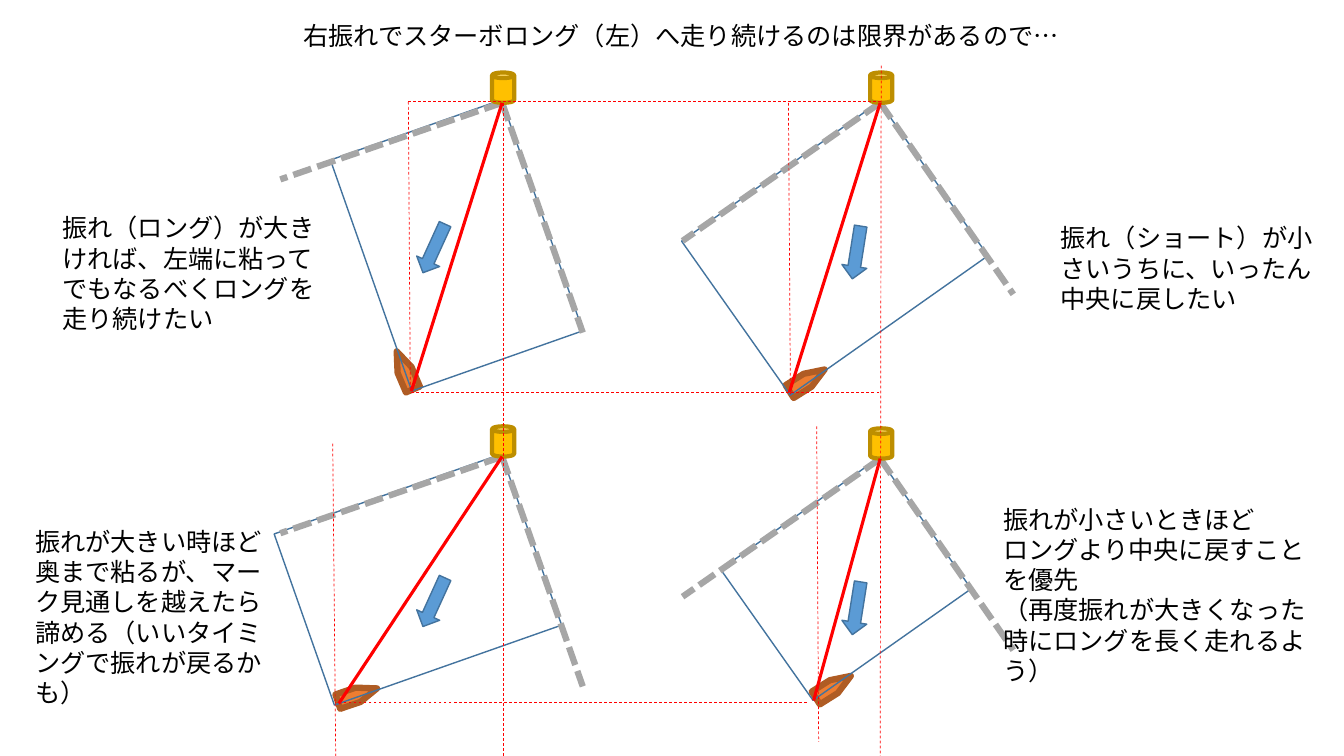
from dataclasses import dataclass

from lxml.etree import SubElement
from pptx import Presentation
from pptx.dml.color import RGBColor
from pptx.enum.dml import MSO_LINE
from pptx.enum.lang import MSO_LANGUAGE_ID
from pptx.enum.shapes import MSO_CONNECTOR, MSO_SHAPE
from pptx.enum.text import MSO_AUTO_SIZE
from pptx.oxml.ns import qn
from pptx.util import Inches, Pt


def rgb(value):
    return RGBColor.from_string(value)


@dataclass
class CourseSlide:
    """Draws sailing courses and captions on one slide in a shared style."""

    slide: object
    font: str = "Noto Sans CJK JP"
    size: int = 18
    ink: str = "000000"
    blue: str = "43739E"
    red: str = "FF0000"
    grey: str = "A6A6A6"

    def outline(self, part, color, width, dash=None):
        part.line.color.rgb = rgb(color)
        part.line.width = Pt(width)
        if dash:
            part.line.dash_style = dash

    def shape(self, kind, box, fill, color, width, angle=0):
        part = self.slide.shapes.add_shape(kind, *map(Inches, box))
        part.shadow.inherit = False
        part.rotation = angle
        if fill:
            part.fill.solid()
            part.fill.fore_color.rgb = rgb(fill)
        else:
            part.fill.background()
        self.outline(part, color, width)
        return part

    def line(self, start, end, color, width, dash=None):
        part = self.slide.shapes.add_connector(
            MSO_CONNECTOR.STRAIGHT, *map(Inches, (*start, *end)))
        SubElement(part._element.spPr, qn("a:effectLst"))
        self.outline(part, color, width, dash)

    def guide(self, start, end):
        self.line(start, end, self.red, 0.5, MSO_LINE.DASH)

    def boat(self, left, top, angle):
        hull = self.shape(MSO_SHAPE.PENTAGON, (left, top, 0.41, 0.15),
                          "ED7D31", "AF5C24", 4.5, angle)
        hull.adjustments[0] = 1.321

    def course(self, mark, swing, boat, field, goal):
        x, y = mark
        self.boat(*boat)
        self.shape(MSO_SHAPE.RECTANGLE, field, None, self.blue, 1, swing["tilt"])
        for dx, dy in swing["laylines"]:
            self.line(mark, (x + dx, y + dy), self.grey, 4.5, MSO_LINE.SQUARE_DOT)
        self.shape(MSO_SHAPE.CAN, (x - 0.1, y - 0.3, 0.22, 0.3), "FFC000", "BD8E00", 3)
        self.line(mark, goal, self.red, 2.25)
        dx, dy = swing["wind"]
        self.shape(MSO_SHAPE.DOWN_ARROW, (x + dx, y + dy, 0.25, 0.53),
                   "5B9BD5", self.blue, 1, swing["wind_angle"])

    def caption(self, box, *paragraphs):
        frame = self.slide.shapes.add_textbox(*map(Inches, box)).text_frame
        frame.word_wrap = True
        frame.auto_size = MSO_AUTO_SIZE.SHAPE_TO_FIT_TEXT
        for index, words in enumerate(paragraphs):
            paragraph = frame.add_paragraph() if index else frame.paragraphs[0]
            paragraph.text = words
            paragraph.font.name = self.font
            paragraph.font.size = Pt(self.size)
            paragraph.font.color.rgb = rgb(self.ink)
            for run in paragraph.runs:
                run.font.language_id = MSO_LANGUAGE_ID.JAPANESE
                SubElement(run._r.get_or_add_rPr(), qn("a:ea"), typeface=self.font)


LARGE_SWING = {"tilt": 340.6, "laylines": ((-2.2, 0.76), (0.8, 2.28)),
               "wind": (-0.8, 1.18), "wind_angle": 24.5}
SMALL_SWING = {"tilt": 324.8, "laylines": ((-1.96, 1.37), (1.32, 1.9)),
               "wind": (-0.36, 1.22), "wind_angle": 9}

COURSES = (
    ((8.73, 1.02), SMALL_SWING, (7.8, 3.7, 327.8), (7.08, 1.53, 2.4, 1.87), (7.83, 3.89)),
    ((4.98, 1.02), LARGE_SWING, (3.81, 3.6, 247), (3.63, 1.22, 1.8, 2.43), (4.08, 3.88)),
    ((4.98, 4.53), LARGE_SWING, (3.34, 6.82, 341.4), (2.95, 4.85, 2.39, 1.8), (3.36, 6.98)),
    ((8.73, 4.55), SMALL_SWING, (8.06, 6.74, 327.8), (7.43, 4.95, 1.92, 1.59), (8.07, 6.95)),
)

GUIDES = (
    ((4.05, 1.01), (8.74, 1.01)),
    ((4.08, 3.89), (8.74, 3.89)),
    ((8, 6.97), (3.32, 6.97)),
    ((4.99, 1.02), (4.99, 7.9)),
    ((8.74, 0.65), (8.73, 7.53)),
    ((3.3, 4.4), (3.33, 7.52)),
    ((8.1, 4.23), (8.12, 7.36)),
    ((4.05, 1.01), (4.07, 3.88)),
    ((7.82, 1.02), (7.84, 3.91)),
)

CAPTIONS = (
    ((2.91, 0.15, 8.68, 0.4),
     "右振れでスターボロング（左）へ走り続けるのは限界があるので…"),
    ((0.52, 2.06, 2.86, 1.31),
     "振れ（ロング）が大きければ、左端に粘ってでもなるべくロングを走り続けたい"),
    ((10.42, 2.16, 2.86, 1.01),
     "振れ（ショート）が小さいうちに、いったん中央に戻したい"),
    ((0.25, 5.17, 2.51, 1.92),
     "振れが大きい時ほど",
     "奥まで粘るが、マーク見通しを越えたら諦める（いいタイミングで振れが戻るかも）"),
    ((9.85, 4.95, 3.27, 1.92),
     "振れが小さいときほど\nロングより中央に戻すことを優先",
     "（再度振れが大きくなった時にロングを長く走れるよう）"),
)


def main():
    deck = Presentation()
    deck.slide_width, deck.slide_height = Inches(13.33), Inches(7.5)
    page = CourseSlide(deck.slides.add_slide(deck.slide_layouts[6]))
    for course in COURSES:
        page.course(*course)
    for guide in GUIDES:
        page.guide(*guide)
    for box, *paragraphs in CAPTIONS:
        page.caption(box, *paragraphs)
    deck.save("out.pptx")


if __name__ == "__main__":
    main()
